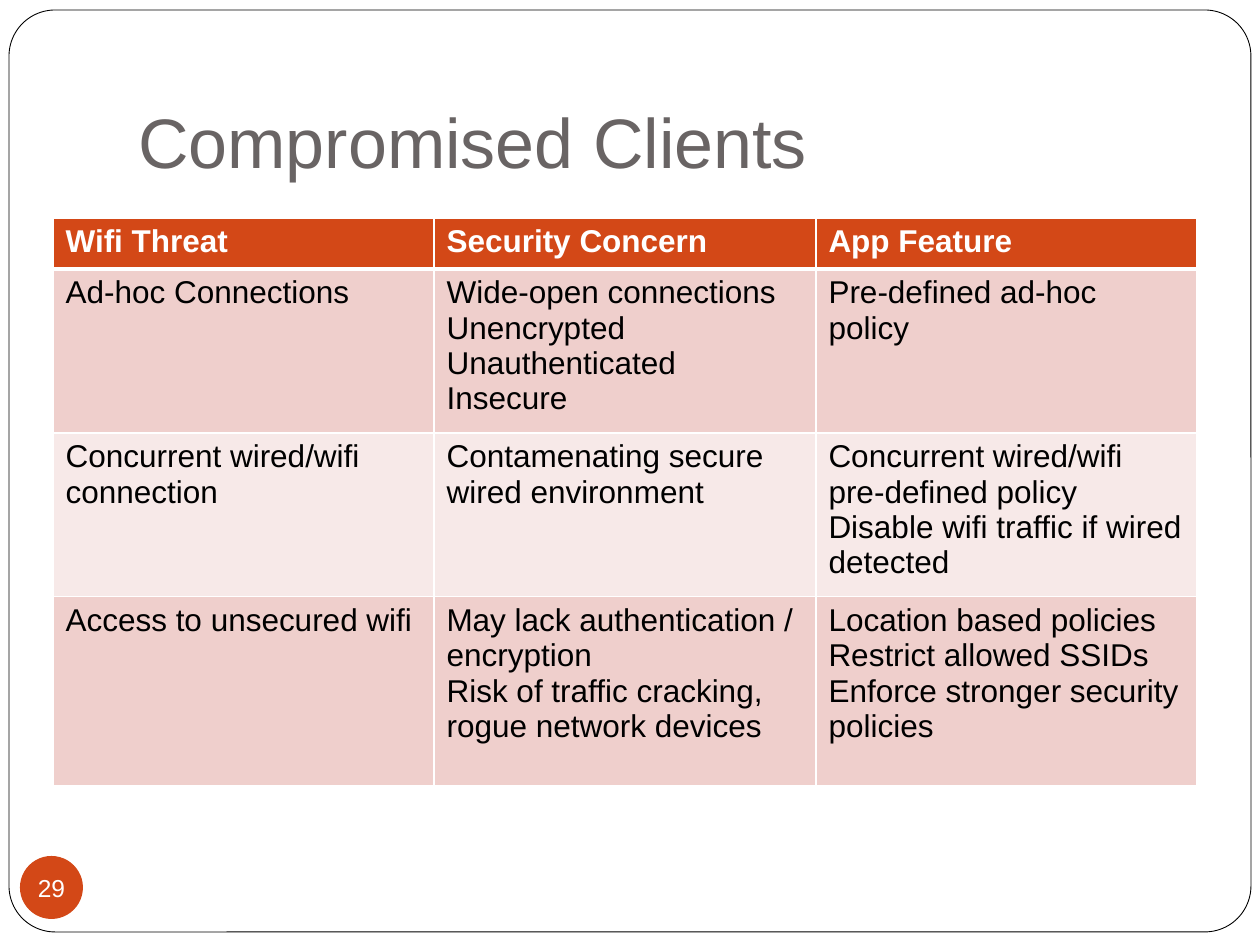
import lxml.etree
import pptx
import pptx.dml.color
import pptx.enum.shapes
import pptx.enum.text
import pptx.oxml.ns
import pptx.util

PX = 914400 // 126
THEME = {
    "font": "Arial",
    "title_size": 40, "table_size": 18, "number_size": 14,
    "white": "FFFFFF", "black": "000000", "gray": "696464",
    "accent": "D34817", "bands": ["EFCFCC", "F7E9E8"],
}
ANCHOR = pptx.enum.text.MSO_ANCHOR
ALIGN = pptx.enum.text.PP_ALIGN
SHAPE = pptx.enum.shapes.MSO_SHAPE


def color(name):
    return pptx.dml.color.RGBColor.from_string(THEME.get(name, name))


def write_text(text_frame, lines, size, ink, bold=False, align=ALIGN.LEFT):
    for index, line in enumerate(lines):
        paragraph = text_frame.add_paragraph() if index else text_frame.paragraphs[0]
        paragraph.alignment = align
        run = paragraph.add_run()
        run.text = line
        run.font.name = THEME["font"]
        run.font.size = pptx.util.Pt(THEME[size])
        run.font.bold = bold
        run.font.color.rgb = color(ink)


presentation = pptx.Presentation()
presentation.slide_width = pptx.util.Inches(10)
presentation.slide_height = pptx.util.Inches(7.5)
slide = presentation.slides.add_slide(presentation.slide_layouts[6])

frame = slide.shapes.add_shape(SHAPE.ROUNDED_RECTANGLE, 9 * PX, 10 * PX, 1242 * PX, 922 * PX)
frame.adjustments[0] = 0.05
frame.shadow.inherit = False
frame.fill.solid()
frame.fill.fore_color.rgb = color("white")
frame.line.color.rgb = color("black")
frame.line.width = pptx.util.Pt(0.5)

title = slide.shapes.add_textbox(126 * PX, 38 * PX, 1071 * PX, 157 * PX)
title.text_frame.word_wrap = True
title.text_frame.vertical_anchor = ANCHOR.BOTTOM
title.text_frame.margin_bottom = pptx.util.Inches(0.1)
write_text(title.text_frame, ["Compromised Clients"], "title_size", "gray")

threat_rows = [
    [["Wifi Threat"], ["Security Concern"], ["App Feature"]],
    [["Ad-hoc Connections"],
     ["Wide-open connections", "Unencrypted", "Unauthenticated", "Insecure"],
     ["Pre-defined ad-hoc policy"]],
    [["Concurrent wired/wifi connection"],
     ["Contamenating secure wired environment"],
     ["Concurrent wired/wifi pre-defined policy", "Disable wifi traffic if wired detected"]],
    [["Access to unsecured wifi"],
     ["May lack authentication / encryption", "Risk of traffic cracking, rogue network devices"],
     ["Location based policies", "Restrict allowed SSIDs", "Enforce stronger security policies"]],
]
row_heights = [51, 51, 51, 189]
column_widths = [381, 382, 381]

table = slide.shapes.add_table(
    len(threat_rows), len(column_widths),
    53 * PX, 218 * PX, sum(column_widths) * PX, sum(row_heights) * PX).table
for column, width in zip(table.columns, column_widths):
    column.width = width * PX

for row_index, (row, height) in enumerate(zip(threat_rows, row_heights)):
    table.rows[row_index].height = height * PX
    header = row_index == 0
    for column_index, lines in enumerate(row):
        cell = table.cell(row_index, column_index)
        properties = cell._tc.get_or_add_tcPr()
        for side in "LRTB":
            thick = (header and side == "B") or (row_index == 1 and side == "T")
            border = lxml.etree.SubElement(
                properties, pptx.oxml.ns.qn(f"a:ln{side}"),
                w=str(pptx.util.Pt(3 if thick else 1)))
            fill = lxml.etree.SubElement(border, pptx.oxml.ns.qn("a:solidFill"))
            lxml.etree.SubElement(fill, pptx.oxml.ns.qn("a:srgbClr"), val=THEME["white"])
        cell.fill.solid()
        cell.fill.fore_color.rgb = color("accent" if header else THEME["bands"][(row_index - 1) % 2])
        write_text(cell.text_frame, lines, "table_size", "white" if header else "black", bold=header)

badge = slide.shapes.add_shape(SHAPE.OVAL, 20 * PX, 856 * PX, 63 * PX, 63 * PX)
badge.shadow.inherit = False
badge.fill.solid()
badge.fill.fore_color.rgb = color("accent")
badge.line.fill.background()
number = badge.text_frame
number.margin_left = number.margin_right = number.margin_top = number.margin_bottom = 0
number.word_wrap = False
number.vertical_anchor = ANCHOR.MIDDLE
write_text(number, ["29"], "number_size", "white", align=ALIGN.CENTER)

presentation.save("out.pptx")
